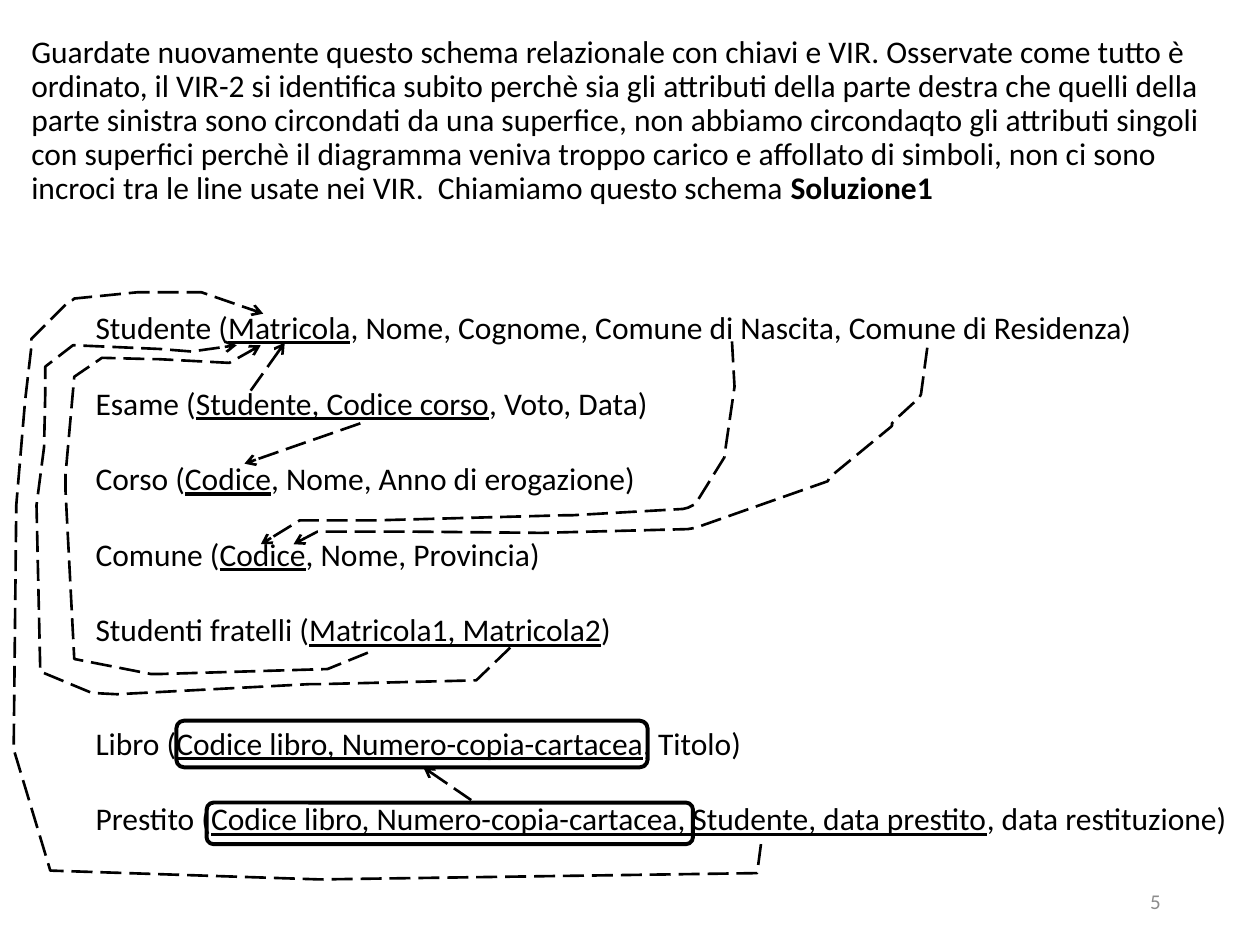
from lxml import etree
from pptx import Presentation
from pptx.dml.color import RGBColor
from pptx.enum.dml import MSO_LINE
from pptx.enum.shapes import MSO_CONNECTOR, MSO_SHAPE
from pptx.enum.text import MSO_ANCHOR, PP_ALIGN
from pptx.oxml.ns import qn
from pptx.util import Inches, Pt

LONG_DASH = MSO_LINE.LONG_DASH
STRAIGHT = MSO_CONNECTOR.STRAIGHT
ROUNDED_RECTANGLE = MSO_SHAPE.ROUNDED_RECTANGLE
TOP, MIDDLE = MSO_ANCHOR.TOP, MSO_ANCHOR.MIDDLE
LEFT, RIGHT = PP_ALIGN.LEFT, PP_ALIGN.RIGHT

BLACK, GRAY = "000000", "8C8C8C"

INTRODUCTION = (
    "Guardate nuovamente questo schema relazionale con chiavi e VIR. "
    "Osservate come tutto è ordinato, il VIR-2 si identifica subito perchè "
    "sia gli attributi della parte destra che quelli della parte sinistra "
    "sono circondati da una superfice, non abbiamo circondaqto gli attributi "
    "singoli con superfici perchè il diagramma veniva troppo carico e "
    "affollato di simboli, non ci sono incroci tra le line usate nei VIR.  "
    "Chiamiamo questo schema "
)

RELATIONS = [
    ("Studente", "Matricola", ", Nome, Cognome, Comune di Nascita, Comune di Residenza"),
    ("Esame", "Studente, Codice corso", ", Voto, Data"),
    ("Corso", "Codice", ", Nome, Anno di erogazione"),
    ("Comune", "Codice", ", Nome, Provincia"),
    ("Studenti fratelli", "Matricola1, Matricola2", ""),
    ("Libro", "Codice libro, Numero-copia-cartacea", ", Titolo"),
    ("Prestito", "Codice libro, Numero-copia-cartacea, Studente, data prestito",
     ", data restituzione"),
]
LINE_GAP = 21.6
EXTRA_GAP_BEFORE = "Libro"

KEY_GROUPS = [(1.4, 5.72, 3.74, 0.37), (1.64, 6.37, 3.86, 0.33)]

STRAIGHT_REFERENCES = [
    ((1.99, 3.1), (2.26, 2.72)),
    ((2.86, 3.36), (1.94, 3.68)),
    ((3.74, 6.35), (3.36, 6.09)),
]

BIRTH_TOWN_REFERENCE = [
    (5.81, 2.71), (5.83, 3.07), (5.76, 3.55), (5.75, 3.63), (5.52, 4),
    (5.46, 4.03), (5.42, 4.04), (4.54, 4.09), (4.48, 4.09), (2.99, 4.13),
    (2.38, 4.13), (2.07, 4.32)]
HOME_TOWN_REFERENCE = [
    (7.36, 2.76), (7.31, 3.13), (7.29, 3.17), (7.26, 3.19), (7.13, 3.31),
    (7.08, 3.36), (7.08, 3.38), (7.07, 3.39), (6.62, 3.76), (6.58, 3.8),
    (6.57, 3.82), (5.52, 4.19), (5.46, 4.2), (4.3, 4.23), (3.27, 4.22),
    (2.52, 4.22), (2.33, 4.32)]
FIRST_SIBLING_REFERENCE = [
    (2.92, 5.18), (2.6, 5.31), (1.26, 5.35), (1.2, 5.35), (0.59, 5.23),
    (0.52, 3.89), (0.52, 3.77), (0.59, 2.99), (0.81, 2.84), (1.2, 2.85),
    (1.25, 2.85), (1.82, 2.88), (2.07, 2.74)]
SECOND_SIBLING_REFERENCE = [
    (4.05, 5.14), (3.78, 5.4), (2.54, 5.43), (2.46, 5.43), (0.93, 5.51),
    (0.73, 5.5), (0.32, 5.33), (0.29, 4.01), (0.35, 3.55), (0.36, 3.11),
    (0.36, 2.91), (0.58, 2.74), (1.27, 2.77), (1.52, 2.79), (1.88, 2.74)]
LOAN_REFERENCE = [
    (6.04, 6.7), (6.01, 6.93), (2.54, 6.98), (0.4, 6.91), (0.11, 5.95),
    (0.11, 5.86), (0.13, 4.01), (0.2, 3.18), (0.25, 2.75), (0.25, 2.69),
    (0.49, 2.45), (0.55, 2.39), (0.58, 2.38), (0.59, 2.37), (1.09, 2.32),
    (1.6, 2.32), (2.09, 2.49)]
BENT_REFERENCES = [
    BIRTH_TOWN_REFERENCE, HOME_TOWN_REFERENCE, FIRST_SIBLING_REFERENCE,
    SECOND_SIBLING_REFERENCE, LOAN_REFERENCE]


def color(value):
    """Turn a hex string into a colour."""
    return RGBColor.from_string(value)


def set_attributes(target, values):
    """Set each named attribute of the target."""
    for name, value in values.items():
        setattr(target, name, value)


def add_text_box(slide, box, anchor):
    """Add a wrapping text box and return its text frame."""
    shape = slide.shapes.add_textbox(*map(Inches, box))
    set_attributes(shape.text_frame, {"word_wrap": True, "vertical_anchor": anchor})
    return shape.text_frame


def add_run(paragraph, text, size=18, hex_color=BLACK, **formats):
    """Add a run of Calibri text."""
    run = paragraph.add_run()
    run.text = text
    set_attributes(run.font, {"name": "Calibri", "size": Pt(size), **formats})
    run.font.color.rgb = color(hex_color)


def add_introduction(slide, box):
    """Place the introductory paragraph."""
    paragraph = add_text_box(slide, box, MIDDLE).paragraphs[0]
    set_attributes(paragraph, {"alignment": LEFT, "line_spacing": 0.9})
    add_run(paragraph, INTRODUCTION)
    add_run(paragraph, "Soluzione1", bold=True)


def add_relations(slide, box):
    """List the relations with their keys underlined."""
    frame = add_text_box(slide, box, TOP)
    frame.margin_top = Pt(3.9)
    for index, (name, key, attributes) in enumerate(RELATIONS):
        paragraph = frame.add_paragraph() if index else frame.paragraphs[0]
        if index:
            lines = 2 if name == EXTRA_GAP_BEFORE else 1
            paragraph.space_before = Pt(lines * LINE_GAP)
        add_run(paragraph, f"{name} (")
        add_run(paragraph, key, underline=True)
        add_run(paragraph, f"{attributes})")


def add_key_group(slide, box):
    """Outline a group of attributes."""
    shape = slide.shapes.add_shape(ROUNDED_RECTANGLE, *map(Inches, box))
    shape.shadow.inherit = False
    shape.fill.background()
    shape.line.color.rgb = color(BLACK)
    shape.line.width = Pt(2.25)


def style_reference(shape):
    """Give a reference line its dashes and arrowhead."""
    shape.line.color.rgb = color(BLACK)
    set_attributes(shape.line, {"width": Pt(1.5), "dash_style": LONG_DASH})
    outline = shape._element.spPr.find(qn("a:ln"))
    etree.SubElement(outline, qn("a:tailEnd"), type="arrow")


def add_straight_reference(slide, start, end):
    """Draw a straight reference between two points."""
    connector = slide.shapes.add_connector(STRAIGHT, *map(Inches, start + end))
    style_reference(connector)
    etree.SubElement(connector._element.spPr, qn("a:effectLst"))


def add_bent_reference(slide, points):
    """Draw a reference through several points."""
    start, *others = [(Inches(x), Inches(y)) for x, y in points]
    builder = slide.shapes.build_freeform(*start)
    builder.add_line_segments(others, close=False)
    shape = builder.convert_to_shape()
    shape.shadow.inherit = False
    shape.fill.background()
    style_reference(shape)


def add_slide_number(slide, box):
    """Place the slide number."""
    paragraph = add_text_box(slide, box, MIDDLE).paragraphs[0]
    paragraph.alignment = RIGHT
    add_run(paragraph, "5", size=12, hex_color=GRAY)


def main():
    """Build and save the presentation."""
    presentation = Presentation()
    set_attributes(presentation, {"slide_width": Inches(10), "slide_height": Inches(7.5)})
    slide = presentation.slides.add_slide(presentation.slide_layouts[6])
    add_introduction(slide, (0.15, 0.64, 9.65, 0.65))
    add_relations(slide, (0.66, 2.39, 9.29, 4.34))
    for start, end in STRAIGHT_REFERENCES:
        add_straight_reference(slide, start, end)
    for points in BENT_REFERENCES:
        add_bent_reference(slide, points)
    for box in KEY_GROUPS:
        add_key_group(slide, box)
    add_slide_number(slide, (7.06, 6.95, 2.25, 0.4))
    presentation.save("out.pptx")


if __name__ == "__main__":
    main()
